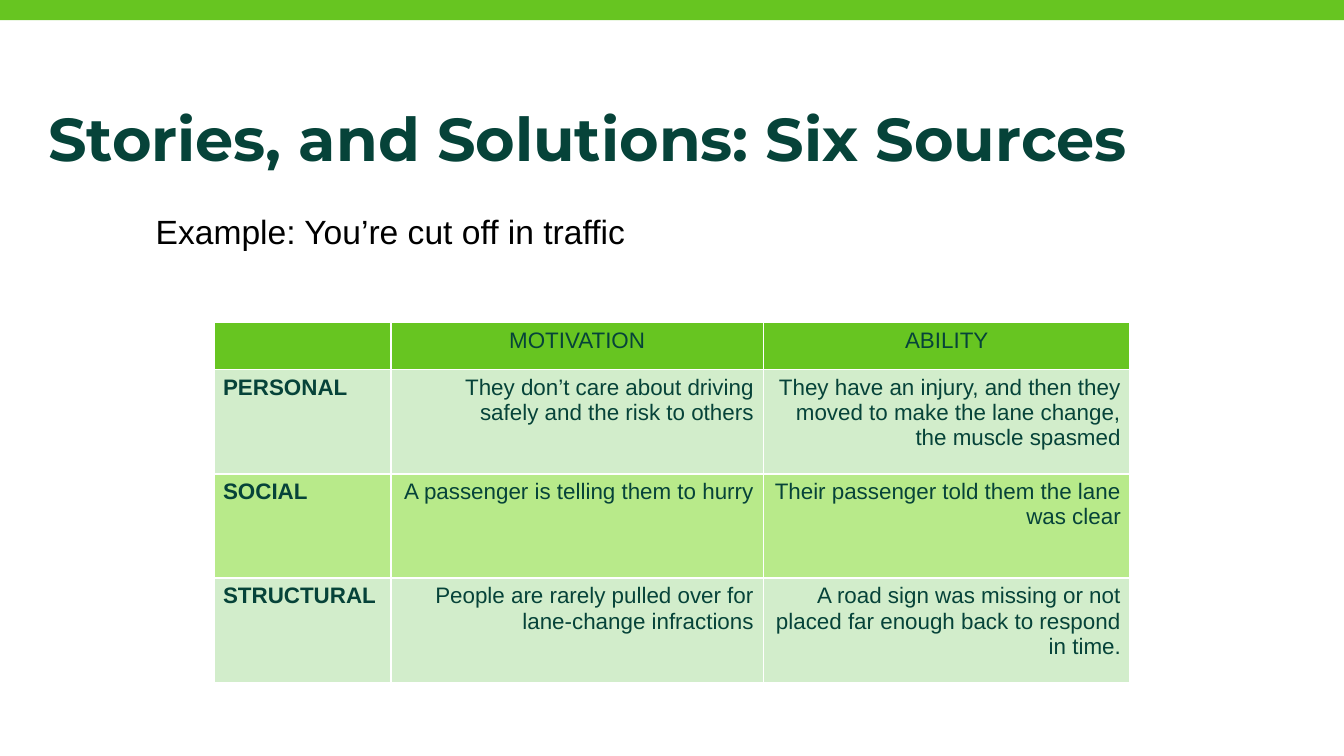
from lxml.etree import SubElement
from pptx import Presentation
from pptx.dml.color import RGBColor
from pptx.enum.shapes import MSO_SHAPE
from pptx.enum.text import MSO_ANCHOR, PP_ALIGN
from pptx.oxml.ns import qn
from pptx.util import Inches, Pt

GREEN, DARK, WHITE = "67C521", "064339", "FFFFFF"
PALE, LIME = "D2EDCB", "B8EA8A"


def color(value):
    return RGBColor.from_string(value)


def add_white_borders(cell):
    properties = cell._tc.get_or_add_tcPr()
    for position, tag in enumerate(("a:lnL", "a:lnR", "a:lnT", "a:lnB")):
        line = SubElement(properties, qn(tag), w=str(Pt(1)))
        fill = SubElement(line, qn("a:solidFill"))
        SubElement(fill, qn("a:srgbClr"), val=WHITE)
        properties.insert(position, line)


deck = Presentation()
deck.slide_width = Inches(10)
deck.slide_height = Inches(10) * 9 // 16
page = deck.slides.add_slide(deck.slide_layouts[6])

# Top band
band = page.shapes.add_shape(MSO_SHAPE.RECTANGLE, 0, 0, Inches(10), Inches(0.15))
band.shadow.inherit = False
band.fill.solid()
band.fill.fore_color.rgb = color(GREEN)
band.line.fill.background()

# Title and example line
texts = [
    ("Stories, and Solutions: Six Sources", (0.26, 0.79, 8.29, 0.87),
     0, 0.95, "Montserrat", 32.4, True, DARK),
    ("Example: You’re cut off in traffic", (1.06, 1.52, 8.12, 0.4),
     0.05, 1.0, "Arial", 18, False, "000000"),
]
for text, place, top_margin, spacing, font, size, bold, ink in texts:
    box = page.shapes.add_textbox(*[Inches(length) for length in place])
    frame = box.text_frame
    frame.word_wrap = True
    frame.vertical_anchor = MSO_ANCHOR.TOP
    frame.margin_top = Inches(top_margin)
    paragraph = frame.paragraphs[0]
    paragraph.text = text
    paragraph.line_spacing = spacing
    paragraph.font.name = font
    paragraph.font.size = Pt(size)
    paragraph.font.bold = bold
    paragraph.font.color.rgb = color(ink)

# Table of sources
rows = [
    ("", "MOTIVATION", "ABILITY"),
    ("PERSONAL", "They don’t care about driving safely and the risk to others",
     "They have an injury, and then they moved to make the lane change, the muscle spasmed"),
    ("SOCIAL", "A passenger is telling them to hurry",
     "Their passenger told them the lane was clear"),
    ("STRUCTURAL", "People are rarely pulled over for lane-change infractions",
     "A road sign was missing or not placed far enough back to respond in time."),
]
row_fills = [GREEN, PALE, LIME, PALE]
table_height, header_height = Inches(2.68), Inches(0.35)
body_height = (table_height - header_height) // 3
table = page.shapes.add_table(
    4, 3, Inches(1.59), Inches(2.4), Inches(6.82), table_height).table
for column, width in zip(table.columns, (1.32, 2.77, 2.73)):
    column.width = Inches(width)
for row_number, texts_in_row in enumerate(rows):
    header = row_number == 0
    table.rows[row_number].height = header_height if header else body_height
    for column_number, text in enumerate(texts_in_row):
        label = column_number == 0
        cell = table.cell(row_number, column_number)
        cell.fill.solid()
        cell.fill.fore_color.rgb = color(row_fills[row_number])
        add_white_borders(cell)
        cell.margin_left = cell.margin_right = Inches(0.07)
        cell.margin_top = cell.margin_bottom = Inches(0.04)
        paragraph = cell.text_frame.paragraphs[0]
        paragraph.text = text
        if header:
            paragraph.alignment = PP_ALIGN.CENTER
        else:
            paragraph.alignment = PP_ALIGN.LEFT if label else PP_ALIGN.RIGHT
        paragraph.font.name = "Arial"
        paragraph.font.size = Pt(12)
        paragraph.font.bold = label
        paragraph.font.color.rgb = color(DARK)

deck.save("out.pptx")
